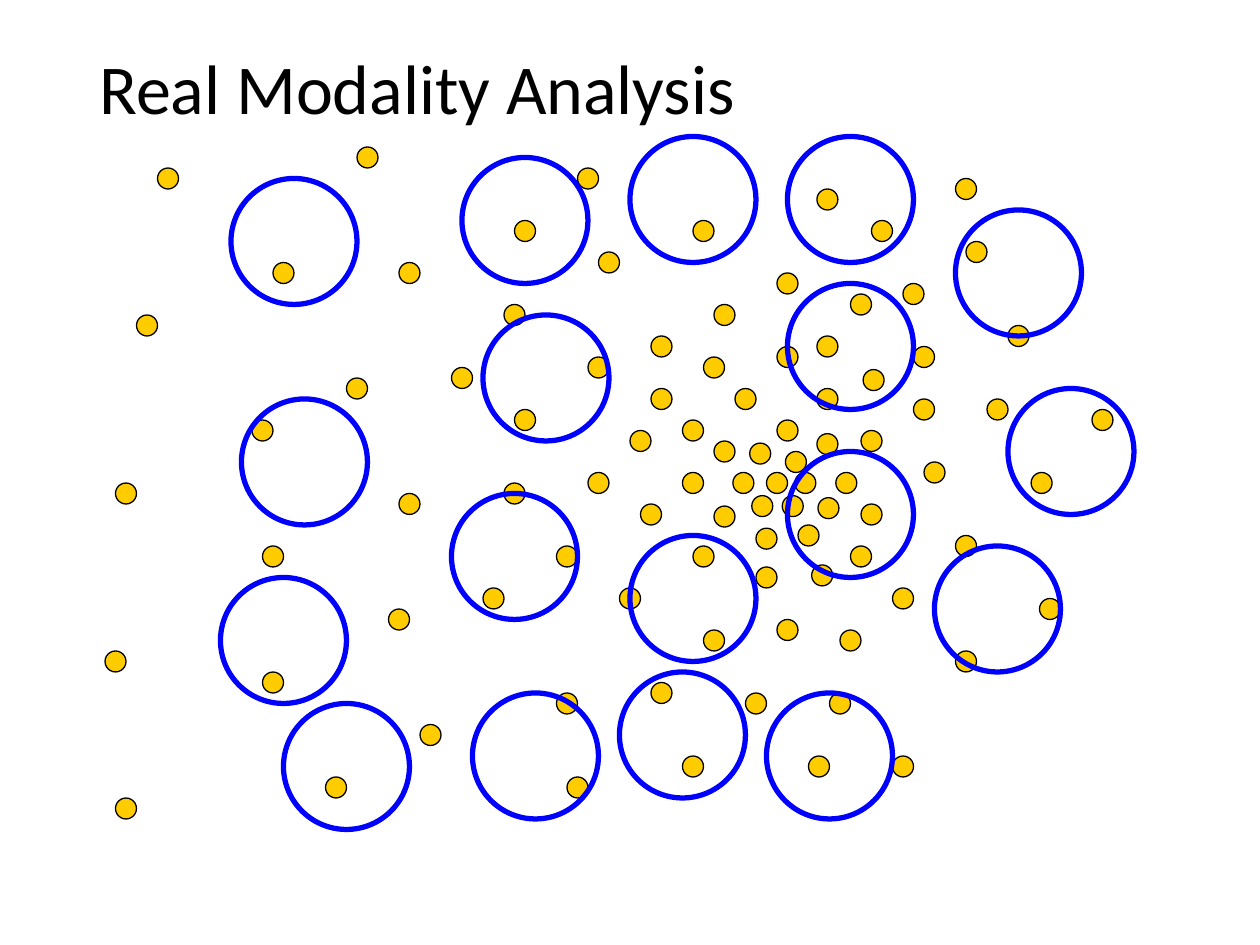
"""Draw sample points and search windows for a mode-seeking slide."""
from pptx import Presentation as Deck
from pptx.dml.color import RGBColor as Color
from pptx.enum.shapes import MSO_SHAPE as Kind
from pptx.enum.text import MSO_ANCHOR as Anchor
from pptx.util import Inches, Pt

TITLE = "Real Modality Analysis"
COLS, ROWS = 120, 90
BOX = (8.3, 0, 103.4, 17.4)
DOT, RING = 2, 12

DOTS = [
    (73, 45), (75.7, 45), (74.8, 43), (71.4, 42.2), (74.5, 47.2),
    (71.6, 47.2), (77.9, 47.4), (69.8, 45), (79.6, 45), (77.8, 41.3),
    (74, 40), (76, 50), (72, 50.3), (68, 48.2), (65, 45), (68, 42),
    (82, 48), (81, 52), (77.3, 53.8), (72, 54), (66, 52), (61, 48),
    (60, 41), (65, 40), (70, 37), (77.8, 37), (74, 33), (62, 37),
    (67, 34), (74, 26), (68, 29), (77.8, 32), (77.8, 18), (81, 28),
    (82.2, 35.2), (82, 41), (87, 38), (87, 33), (86, 27), (83, 21),
    (91, 17), (92, 23), (96, 31), (88, 44), (94, 38), (104, 39),
    (91, 51), (98.2, 45), (85, 56), (99, 57), (91, 62), (80, 60),
    (74, 59), (79, 66), (85, 72), (77, 72), (71, 66), (67, 60),
    (59, 56), (62, 65), (65, 72), (54, 74), (53, 66), (46, 56),
    (53, 52), (56, 45), (49, 39), (56, 34), (62, 32), (57, 24),
    (66, 21), (55, 16), (49, 21), (48, 29), (43, 35), (48, 46),
    (38, 47), (37, 58), (40, 69), (31, 74), (25, 64), (25, 52),
    (33, 36), (38, 25), (26, 25), (24, 40), (10, 62), (11, 76),
    (11, 46), (13, 30), (15, 16), (34, 14),
]
RINGS = [
    (27, 67), (21, 55), (23, 38), (22, 17), (44, 15), (45, 66),
    (59, 64), (73, 66), (89, 52), (96, 37), (91, 20), (75, 13),
    (60, 13), (43, 47), (46, 30), (75, 27), (75, 43), (60, 51),
]
THEME = {
    "font": "Calibri", "size": Pt(40), "ink": Color(0, 0, 0),
    "dot": Color(255, 204, 0), "ring": Color(0, 0, 255),
    "thin": Pt(0.75), "thick": Pt(3),
}

deck = Deck()
deck.slide_width, deck.slide_height = Inches(10), Inches(7.5)
slide = deck.slides.add_slide(deck.slide_layouts[6])


def place(col, row, wide, high):
    across, down = deck.slide_width / COLS, deck.slide_height / ROWS
    return [round(v) for v in
            (col * across, row * down, wide * across, high * down)]


def circle(spot, size, line, width, fill=None):
    shape = slide.shapes.add_shape(Kind.OVAL, *place(*spot, size, size))
    shape.shadow.inherit = False
    if fill is None:
        shape.fill.background()
    else:
        shape.fill.solid()
        shape.fill.fore_color.rgb = fill
    shape.line.color.rgb = line
    shape.line.width = width


def title():
    frame = slide.shapes.add_textbox(*place(*BOX)).text_frame
    frame.word_wrap = True
    frame.vertical_anchor = Anchor.MIDDLE
    frame.text = TITLE
    para = frame.paragraphs[0]
    para.line_spacing = 0.9
    font = para.runs[0].font
    font.name, font.size = THEME["font"], THEME["size"]
    font.color.rgb = THEME["ink"]


for spot in DOTS:
    circle(spot, DOT, THEME["ink"], THEME["thin"], THEME["dot"])
for spot in RINGS:
    circle(spot, RING, THEME["ring"], THEME["thick"])
title()
deck.save("out.pptx")
